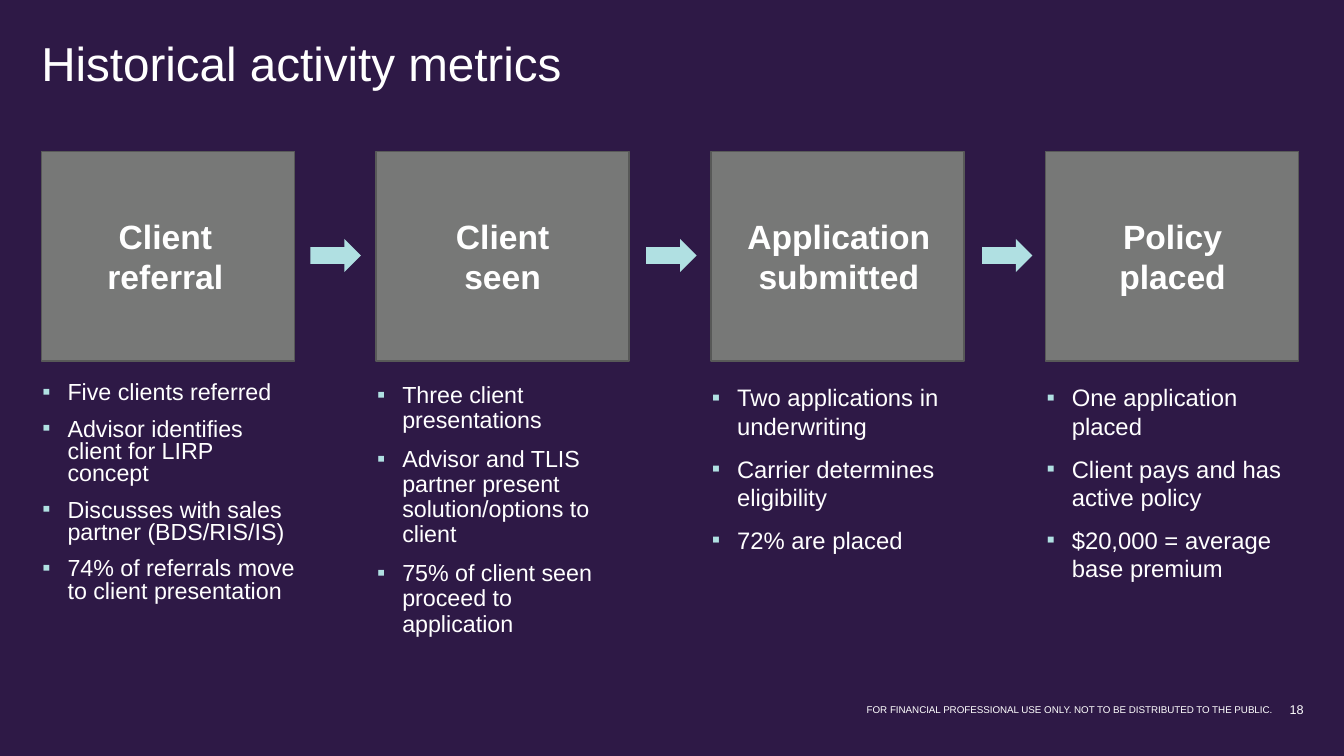
from dataclasses import dataclass

from lxml import etree
from pptx import Presentation
from pptx import util as u
from pptx.dml.color import RGBColor
from pptx.enum import shapes, text
from pptx.oxml.ns import qn

PX = 9144


@dataclass(frozen=True)
class Theme:
    """Colours, font and type sizes of the deck."""
    ground: str = "2E1946"
    ink: str = "FFFFFF"
    panel: str = "777877"
    edge: str = "585958"
    accent: str = "B0E0E2"
    font: str = "Arial"
    title: float = 34
    heading: float = 24
    number: float = 9
    footer: float = 7


@dataclass(frozen=True)
class Stage:
    """One step of the process, with its heading's inset and width."""
    heading: str
    inset: int
    width: int
    size: float
    spacing: float
    points: tuple


THEME = Theme()
STAGES = (
    Stage("Client referral", 23, 200, 16.6, 0.8, (
        "Five clients referred",
        "Advisor identifies client for LIRP concept",
        "Discusses with sales partner (BDS/RIS/IS)",
        "74% of referrals move to client presentation")),
    Stage("Client seen", 37, 177, 16.6, 0.9, (
        "Three client presentations",
        "Advisor and TLIS partner present solution/options to client",
        "75% of client seen proceed to application")),
    Stage("Application submitted", 20, 214, 17, 1.0, (
        "Two applications in underwriting",
        "Carrier determines eligibility",
        "72% are placed")),
    Stage("Policy placed", 26, 200, 17, 1.0, (
        "One application placed",
        "Client pays and has active policy",
        "$20,000 = average base premium")),
)


def emu(*lengths):
    """Turn px lengths into EMU."""
    return [u.Emu(length * PX) for length in lengths]


def place(shape, box):
    """Move a shape to a px box."""
    shape.left, shape.top, shape.width, shape.height = emu(*box)


def set_frame(frame, anchor, margin=0):
    """Wrap a text frame, fix its size and set its margins and anchor."""
    frame.word_wrap = True
    frame.auto_size = text.MSO_AUTO_SIZE.NONE
    frame.vertical_anchor = anchor
    frame.margin_left = frame.margin_right = u.Emu(margin * PX)
    frame.margin_top = frame.margin_bottom = u.Emu(margin * PX // 2)


def style(para, size, align, bold=False):
    """Set a paragraph's font and alignment."""
    para.alignment = align
    para.font.name = THEME.font
    para.font.size = u.Pt(size)
    para.font.bold = bold
    para.font.color.rgb = RGBColor.from_string(THEME.ink)


def add_label(page, box, words, size, align, anchor, margin=0, bold=False):
    """Add a one-paragraph text box."""
    label = page.shapes.add_textbox(*emu(*box))
    set_frame(label.text_frame, anchor, margin)
    para = label.text_frame.paragraphs[0]
    para.text = words
    style(para, size, align, bold)


def add_block(page, kind, box, fill, edge=None):
    """Add a flat preset shape, outlined if an edge colour is given."""
    block = page.shapes.add_shape(kind, *emu(*box))
    block.shadow.inherit = False
    block.fill.solid()
    block.fill.fore_color.rgb = RGBColor.from_string(fill)
    if edge:
        block.line.color.rgb = RGBColor.from_string(edge)
        block.line.width = u.Pt(1)
    else:
        block.line.fill.background()


def add_bullet(para):
    """Give a paragraph a hanging square bullet."""
    props = para._p.get_or_add_pPr()
    indent = 25 * PX
    props.set("marL", str(indent))
    props.set("indent", str(-indent))
    colour = etree.SubElement(props, qn("a:buClr"))
    etree.SubElement(colour, qn("a:srgbClr"), val=THEME.accent)
    etree.SubElement(props, qn("a:buChar"), char="▪")


def fill_title(title, box, words):
    """Place and format the slide title."""
    place(title, box)
    set_frame(title.text_frame, text.MSO_ANCHOR.TOP)
    para = title.text_frame.paragraphs[0]
    para.text = words
    para.line_spacing = 0.85
    style(para, THEME.title, text.PP_ALIGN.LEFT)


def fill_points(body, box, stage):
    """Place a body placeholder and list the stage's points in it."""
    place(body, box)
    frame = body.text_frame
    set_frame(frame, text.MSO_ANCHOR.TOP)
    for index, point in enumerate(stage.points):
        para = frame.add_paragraph() if index else frame.paragraphs[0]
        para.text = point
        add_bullet(para)
        para.line_spacing = stage.spacing
        para.space_before = u.Pt(10 if index else 0)
        style(para, stage.size, text.PP_ALIGN.LEFT)


def add_stage(page, body, box, stage):
    """Draw one stage: panel, heading and list."""
    left, top, width, height = box
    add_block(page, shapes.MSO_SHAPE.RECTANGLE, (left, top, width, 208),
              THEME.panel, THEME.edge)
    add_label(page, (left + stage.inset, top + 59, stage.width, 91),
              stage.heading, THEME.heading, text.PP_ALIGN.CENTER,
              text.MSO_ANCHOR.TOP, margin=10, bold=True)
    fill_points(body, (left + 1, top + 230, width - 1, height - 230), stage)


def add_footer(page, box):
    """Add the notice and the page number."""
    left, top, width, height = box
    add_label(page, (left, top + 14, width - 31, 12),
              "FOR FINANCIAL PROFESSIONAL USE ONLY. "
              "NOT TO BE DISTRIBUTED TO THE PUBLIC.",
              THEME.footer, text.PP_ALIGN.RIGHT, text.MSO_ANCHOR.BOTTOM)
    add_label(page, (left + width - 71, top, 71, height), "18",
              THEME.number, text.PP_ALIGN.RIGHT, text.MSO_ANCHOR.MIDDLE)


def add_process_page(deck):
    """Build the four-stage process slide."""
    page = deck.slides.add_slide(deck.slide_layouts.get_by_name("Comparison"))
    page.background.fill.solid()
    page.background.fill.fore_color.rgb = RGBColor.from_string(THEME.ground)
    title, *bodies = page.placeholders
    fill_title(title, (41, 42, 1197, 65), "Historical activity metrics")
    for index, (body, stage) in enumerate(zip(bodies, STAGES)):
        add_stage(page, body, (41 + 332 * index, 150, 251, 499), stage)
    for index in range(len(STAGES) - 1):
        add_block(page, shapes.MSO_SHAPE.RIGHT_ARROW,
                  (308 + 333 * index, 237, 50, 33), THEME.accent)
    add_footer(page, (715, 684, 578, 40))


def main():
    """Create and save the deck."""
    deck = Presentation()
    deck.slide_width, deck.slide_height = u.Inches(13.33), u.Inches(7.5)
    add_process_page(deck)
    deck.save("out.pptx")


if __name__ == "__main__":
    main()
